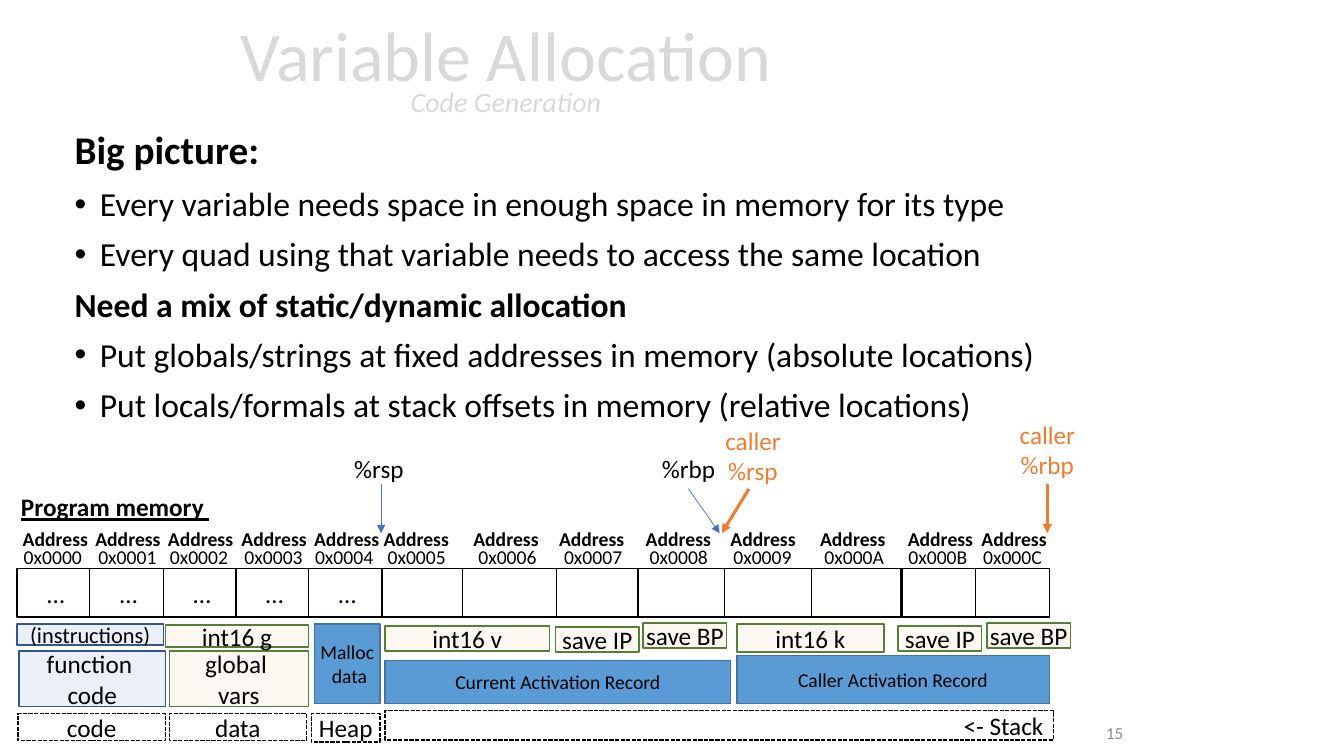
"""Build the Variable Allocation slide with its program memory map."""
import dataclasses
import typing

import lxml.etree
import pptx
import pptx.dml.color
import pptx.enum.dml
import pptx.enum.shapes
import pptx.enum.text
import pptx.oxml.ns
import pptx.util

GRID_INCHES = 0.1
FONT = "Calibri"
COLOURS = {
    "black": "000000", "white": "FFFFFF", "heading": "D9D9D9", "number": "8C8C8C",
    "blue": "4472C4", "navy": "325491", "peach": "F4B183", "green": "538035",
    "sky": "5B9BD5", "steel": "43739E", "orange": "ED7D31",
}
ALIGN = pptx.enum.text.PP_ALIGN
ANCHOR = pptx.enum.text.MSO_ANCHOR
FIT = pptx.enum.text.MSO_AUTO_SIZE
qn = pptx.oxml.ns.qn


@dataclasses.dataclass(frozen=True)
class Area:
    left: float
    top: float
    width: float
    height: float

    def lengths(self) -> list[int]:
        return [grid(value) for value in dataclasses.astuple(self)]


@dataclasses.dataclass(frozen=True)
class Style:
    line: str
    fill: str | None = None
    opacity: int = 100
    dashed: bool = False


@dataclasses.dataclass(frozen=True)
class Block:
    area: Area
    lines: tuple[str, ...]
    style: Style
    size: int = 18
    tight: bool = False
    align: typing.Any = ALIGN.CENTER


@dataclasses.dataclass(frozen=True)
class Cell:
    address: str
    left: float
    width: float
    label_middle: float
    address_middle: float
    elided: bool = False


@dataclasses.dataclass(frozen=True)
class Pointer:
    label: Area
    lines: tuple[str, ...]
    start: tuple[float, float]
    end: tuple[float, float]
    colour: str
    text_colour: str
    weight: float


MEMORY = Style("black", "white")
SEGMENT = Style("black", dashed=True)
CODE = Style("navy", "blue", 10)
VALUE = Style("green", "peach", 10)
RECORD = Style("steel", "sky")

CELLS = [
    Cell("0x0000", 1.7, 7.3, 5.5, 5.25, True),
    Cell("0x0001", 8.9, 7.3, 12.7, 12.65, True),
    Cell("0x0002", 16.2, 7.3, 19.9, 19.75, True),
    Cell("0x0003", 23.4, 7.3, 27.2, 27.15, True),
    Cell("0x0004", 30.6, 7.3, 34.4, 34.15, True),
    Cell("0x0005", 37.9, 9.3, 41.3, 41.35),
    Cell("0x0007", 54.7, 9.3, 58.7, 58.85),
    Cell("0x0006", 45.9, 9.3, 50.2, 50.35),
    Cell("0x0008", 63.3, 9.3, 67.3, 67.35),
    Cell("0x0009", 71.9, 9.3, 75.7, 75.65),
    Cell("0x000A", 80.5, 8.9, 84.6, 84.75),
    Cell("0x000B", 89.5, 7.3, 93.3, 93.05),
    Cell("0x000C", 96.8, 7.3, 100.6, 100.45),
]
BLOCKS = [
    Block(Area(1.8, 70.8, 14.6, 2.7), ("code",), SEGMENT),
    Block(Area(16.8, 70.8, 13.6, 2.7), ("data",), SEGMENT),
    Block(Area(30.9, 70.8, 6.8, 2.8), ("Heap",), SEGMENT, tight=True),
    Block(Area(38.2, 70.5, 66.3, 2.9), ("<- Stack",), SEGMENT, align=ALIGN.RIGHT),
    Block(Area(1.9, 64.6, 14.5, 5.5), ("function ", "code"), CODE),
    Block(Area(1.7, 61.9, 14.5, 2.1), ("(instructions)",), CODE, 16),
    Block(Area(16.8, 64.6, 13.8, 5.5), ("global ", "vars"), VALUE),
    Block(Area(16.4, 62, 14.2, 2.2), ("int16 g",), VALUE),
    Block(Area(31.2, 61.9, 6.5, 7.9), ("Malloc", " data"), RECORD, 14, True),
    Block(Area(73.1, 65, 31, 4.8), ("Caller Activation Record",), RECORD, 14),
    Block(Area(38.2, 65.5, 34.3, 4.3), ("Current Activation Record",), RECORD, 14),
    Block(Area(73.1, 61.9, 14.6, 2.8), ("int16 k",), VALUE),
    Block(Area(38.2, 62.1, 16.3, 2.5), ("int16 v",), VALUE),
    Block(Area(55.1, 62.2, 8.3, 2.5), ("save IP",), VALUE, tight=True),
    Block(Area(63.8, 61.8, 8.3, 2.5), ("save BP",), VALUE, tight=True),
    Block(Area(89.1, 62.1, 8.3, 2.5), ("save IP",), VALUE, tight=True),
    Block(Area(97.9, 61.8, 8.3, 2.5), ("save BP",), VALUE, tight=True),
]
POINTERS = [
    Pointer(Area(34.1, 44.5, 7, 4), ("%rsp",), (37.8, 48), (37.8, 52.9), "blue", "black", 0.5),
    Pointer(Area(64.6, 44.5, 7.4, 4), ("%rbp",), (68.3, 48.5), (71.4, 52.9), "blue", "black", 0.5),
    Pointer(Area(100.1, 41.1, 7.6, 7.1), ("caller", "%rbp"), (103.9, 48), (103.9, 52.9),
            "orange", "orange", 2.25),
    Pointer(Area(70.9, 41.7, 7.6, 7.1), ("caller", "%rsp"), (74.3, 48.5), (71.6, 52.9),
            "orange", "orange", 2.25),
]
BODY = [
    ("Big picture:", 28, False),
    ("Every variable needs space in enough space in memory for its type", 24, True),
    ("Every quad using that variable needs to access the same location", 24, True),
    ("Need a mix of static/dynamic allocation", 24, False),
    ("Put globals/strings at fixed addresses in memory (absolute locations)", 24, True),
    ("Put locals/formals at stack offsets in memory (relative locations)", 24, True),
]


def grid(count: float) -> int:
    return pptx.util.Inches(count * GRID_INCHES)


def rgb(name: str) -> pptx.dml.color.RGBColor:
    return pptx.dml.color.RGBColor.from_string(COLOURS[name])


def add_span(para, text: str, size: float, colour: str = "black", bold: bool = False):
    span = para.add_run()
    span.text = text
    span.font.name = FONT
    span.font.size = pptx.util.Pt(size)
    span.font.bold = bold
    span.font.color.rgb = rgb(colour)
    return span


def fill_frame(frame, lines: typing.Sequence[str], size: float, align,
               colour: str = "black", bold: bool = False, tight: bool = False) -> None:
    if tight:
        frame.margin_left = frame.margin_right = 0
    for index, line in enumerate(lines):
        para = frame.add_paragraph() if index else frame.paragraphs[0]
        para.alignment = align
        add_span(para, line, size, colour, bold)


def add_label(page, area: Area, lines: typing.Sequence[str], size: float = 18,
              align=ALIGN.LEFT, wrap: bool = False, **look):
    frame = page.shapes.add_textbox(*area.lengths()).text_frame
    frame.word_wrap = wrap
    frame.auto_size = FIT.SHAPE_TO_FIT_TEXT
    fill_frame(frame, lines, size, align, **look)
    return frame


def add_rectangle(page, area: Area, style: Style):
    box = page.shapes.add_shape(pptx.enum.shapes.MSO_SHAPE.RECTANGLE, *area.lengths())
    box.shadow.inherit = False
    box.line.color.rgb = rgb(style.line)
    box.line.width = pptx.util.Pt(1)
    if style.dashed:
        box.line.dash_style = pptx.enum.dml.MSO_LINE.SQUARE_DOT
    if style.fill is None:
        box.fill.background()
        return box
    box.fill.solid()
    box.fill.fore_color.rgb = rgb(style.fill)
    if style.opacity < 100:
        tint = box.element.spPr.find(qn("a:solidFill"))[0]
        lxml.etree.SubElement(tint, qn("a:alpha"), val=str(style.opacity * 1000))
    return box


def add_block(page, block: Block) -> None:
    frame = add_rectangle(page, block.area, block.style).text_frame
    frame.word_wrap = True
    frame.vertical_anchor = ANCHOR.MIDDLE
    fill_frame(frame, block.lines, block.size, block.align, tight=block.tight)


def add_cell(page, cell: Cell) -> None:
    add_rectangle(page, Area(cell.left, 56.4, cell.width, 4.8), MEMORY)
    if cell.elided:
        add_label(page, Area(cell.left + 2, 56.9, 3.8, 4), ["…"])


def add_address(page, cell: Cell) -> None:
    for text, middle, top, width, bold in (
        ("Address", cell.label_middle, 51.8, 7.8, True),
        (cell.address, cell.address_middle, 53.6, 6.3, False),
    ):
        area = Area(middle - width / 2, top, width, 3.4)
        add_label(page, area, [text], 14, ALIGN.CENTER, True, bold=bold, tight=True)


def add_pointer(page, pointer: Pointer) -> None:
    ends = [grid(value) for value in pointer.start + pointer.end]
    arrow = page.shapes.add_connector(pptx.enum.shapes.MSO_CONNECTOR.STRAIGHT, *ends)
    arrow.line.color.rgb = rgb(pointer.colour)
    arrow.line.width = pptx.util.Pt(pointer.weight)
    properties = arrow.element.spPr
    lxml.etree.SubElement(properties.find(qn("a:ln")), qn("a:tailEnd"), type="triangle")
    lxml.etree.SubElement(properties, qn("a:effectLst"))
    add_label(page, pointer.label, pointer.lines, align=ALIGN.CENTER, colour=pointer.text_colour)


def place(holder, area: Area):
    holder.left, holder.top, holder.width, holder.height = area.lengths()
    holder.text_frame.word_wrap = True
    holder.text_frame.auto_size = FIT.NONE
    return holder.text_frame


def write_title(holder) -> None:
    frame = place(holder, Area(0.2, 0.3, 100, 14.5))
    frame.vertical_anchor = ANCHOR.MIDDLE
    para = frame.paragraphs[0]
    para.alignment = ALIGN.CENTER
    para.line_spacing = 0.7
    add_span(para, "Variable Allocation", 50, "heading")
    para.add_line_break()
    add_span(para, "Code Generation", 20, "heading").font.italic = True


def write_body(holder) -> None:
    frame = place(holder, Area(6.4, 12.5, 101.4, 44.9))
    for index, (text, size, bulleted) in enumerate(BODY):
        para = frame.add_paragraph() if index else frame.paragraphs[0]
        para.line_spacing = 0.9
        para.space_before = pptx.util.Pt(10)
        properties = para._p.get_or_add_pPr()
        indent = grid(2.5) if bulleted else 0
        properties.set("marL", str(indent))
        properties.set("indent", str(-indent))
        if bulleted:
            lxml.etree.SubElement(properties, qn("a:buFont"), typeface="Arial")
            lxml.etree.SubElement(properties, qn("a:buChar"), char="•")
        else:
            lxml.etree.SubElement(properties, qn("a:buNone"))
        add_span(para, text, size, bold=not bulleted)


def main() -> None:
    deck = pptx.Presentation()
    deck.slide_width, deck.slide_height = grid(133.33), grid(75)
    page = deck.slides.add_slide(deck.slide_layouts[1])
    write_title(page.shapes.title)
    write_body(page.placeholders[1])
    number = add_label(page, Area(89.9, 70.7, 22.5, 4), ["15"], 12, ALIGN.RIGHT, True, colour="number")
    number.auto_size = FIT.NONE
    number.vertical_anchor = ANCHOR.MIDDLE
    for draw, items in ((add_cell, CELLS), (add_address, CELLS),
                        (add_block, BLOCKS), (add_pointer, POINTERS)):
        for item in items:
            draw(page, item)
    heading = add_label(page, Area(1.1, 48.3, 20.9, 4), ["Program memory "], bold=True)
    heading.paragraphs[0].runs[0].font.underline = True
    deck.save("out.pptx")


if __name__ == "__main__":
    main()
